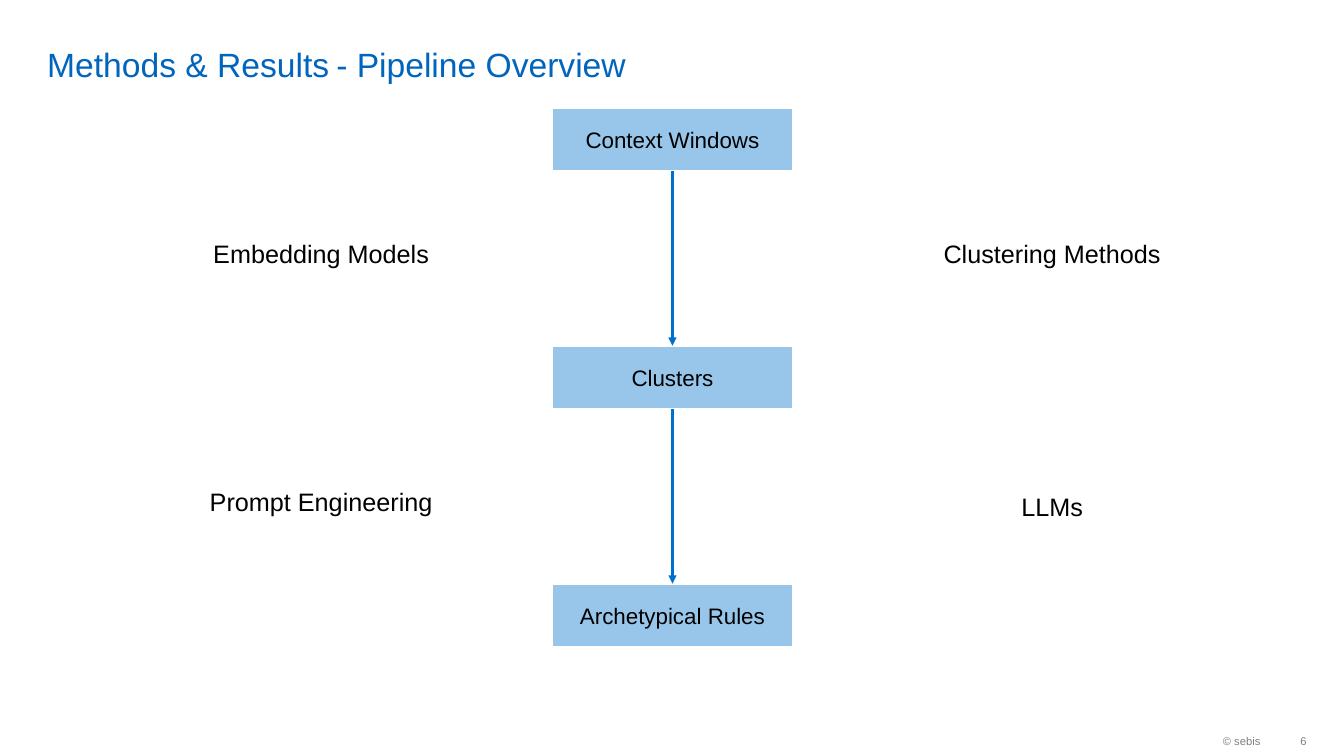
from itertools import pairwise

from pptx import Presentation
from pptx.dml.color import RGBColor
from pptx.enum.shapes import MSO_CONNECTOR as CONN, MSO_SHAPE as SHAPE
from pptx.enum.text import MSO_ANCHOR as ANCHOR, PP_ALIGN as ALIGN
from pptx.oxml.ns import qn
from pptx.util import Pt
from lxml.etree import SubElement

PX = 9144  # EMU per px, 100 px to the inch
FONT = "Arial"
COLORS = {
    "title": "0065BD",
    "text": "000000",
    "footer": "7F7F7F",
    "box": "98C6EA",
    "border": "FFFFFF",
    "arrow": "0070CF",
}
BOX_LEFT, BOX_TOP, BOX_W, BOX_H, BOX_STEP = 547, 107, 240, 63, 236
STAGES = ["Context Windows", "Clusters", "Archetypical Rules"]
LABEL_W, LABEL_H = 435, 155
LABELS = [
    ("Embedding Models", 101, 174),
    ("Clustering Methods", 826, 174),
    ("Prompt Engineering", 101, 420),
    ("LLMs", 826, 425),
]


def px(*lengths):
    return [n * PX for n in lengths]


def rgb(name):
    return RGBColor.from_string(COLORS[name])


def fill_text(sp, runs, align, anchor, insets):
    """Write runs of (text, size, colour name) into one paragraph."""
    tf = sp.text_frame
    tf.word_wrap = True
    tf.vertical_anchor = anchor
    tf.margin_left, tf.margin_top, tf.margin_right, tf.margin_bottom = px(*insets)
    p = tf.paragraphs[0]
    p.alignment = align
    for text, size, color in runs:
        r = p.add_run()
        r.text = text
        r.font.name = FONT
        r.font.size = Pt(size)
        r.font.color.rgb = rgb(color)


def add_text(slide, box, runs, align, anchor, insets):
    sp = slide.shapes.add_textbox(*px(*box))
    fill_text(sp, runs, align, anchor, insets)


def add_stage(slide, text, top):
    sp = slide.shapes.add_shape(SHAPE.RECTANGLE, *px(BOX_LEFT, top, BOX_W, BOX_H))
    sp.shadow.inherit = False
    sp.fill.solid()
    sp.fill.fore_color.rgb = rgb("box")
    sp.line.color.rgb = rgb("border")
    sp.line.width = Pt(2)
    fill_text(sp, [(text, 16, "text")], ALIGN.CENTER, ANCHOR.MIDDLE, (7, 4, 7, 4))
    return sp


def add_arrow(slide, upper, lower):
    arrow = slide.shapes.add_connector(CONN.STRAIGHT, 0, 0, 0, 0)
    arrow.begin_connect(upper, 2)
    arrow.end_connect(lower, 0)
    arrow.line.color.rgb = rgb("arrow")
    arrow.line.width = Pt(1.5)
    SubElement(arrow.line._get_or_add_ln(), qn("a:tailEnd"), type="triangle")
    SubElement(arrow._element.spPr, qn("a:effectLst"))


def main():
    prs = Presentation()
    prs.slide_width, prs.slide_height = px(1333, 750)
    slide = prs.slides.add_slide(prs.slide_layouts[6])

    title = [
        ("Methods & Results", 24, "title"),
        (" ", 18, "text"),
        ("- Pipeline Overview", 24, "title"),
    ]
    add_text(slide, (37, 5, 1158, 79), title, ALIGN.LEFT, ANCHOR.BOTTOM, (10, 0, 10, 0))
    add_text(slide, (1026, 719, 234, 32), [("© sebis", 8, "footer")],
             ALIGN.RIGHT, ANCHOR.MIDDLE, (10, 5, 10, 5))
    add_text(slide, (1260, 719, 36, 32), [("6", 8, "footer")],
             ALIGN.RIGHT, ANCHOR.MIDDLE, (10, 5, 0, 5))

    stages = [add_stage(slide, text, BOX_TOP + i * BOX_STEP)
              for i, text in enumerate(STAGES)]
    for upper, lower in pairwise(stages):
        add_arrow(slide, upper, lower)
    for text, left, top in LABELS:
        add_text(slide, (left, top, LABEL_W, LABEL_H), [(text, 18, "text")],
                 ALIGN.CENTER, ANCHOR.MIDDLE, (10, 10, 10, 10))

    prs.save("out.pptx")


if __name__ == "__main__":
    main()
